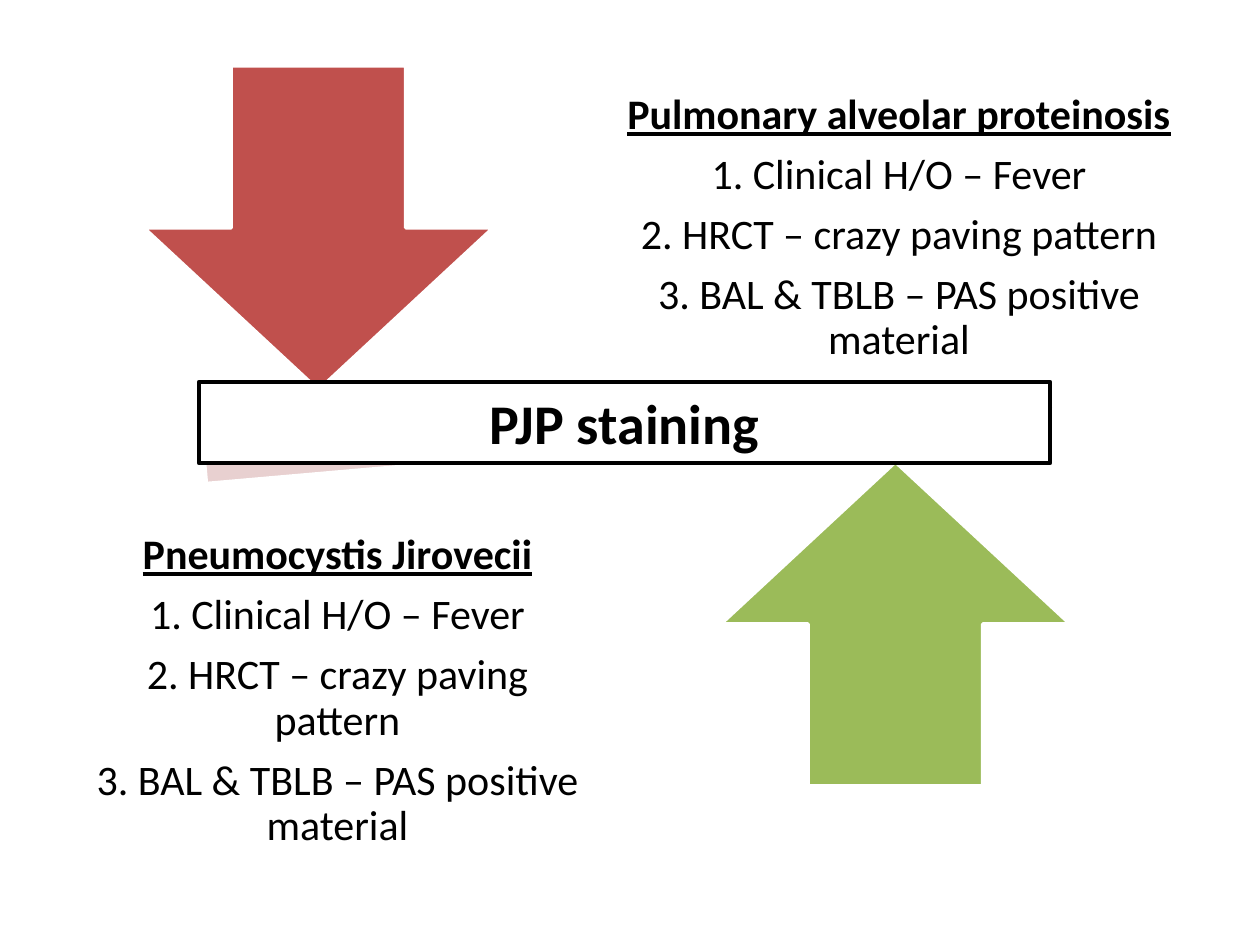
from pptx import Presentation
from pptx.dml.color import RGBColor
from pptx.enum.shapes import MSO_SHAPE as Kind
from pptx.enum.text import MSO_ANCHOR as Anchor, PP_ALIGN as Align
from pptx.util import Emu, Pt

SCALE = 914400 / 126
HUES = {
    "red": "C0504D",
    "pink": "E8D0D0",
    "green": "9BBB59",
    "white": "FFFFFF",
    "black": "000000",
}
SIGNS = [
    "1. Clinical H/O – Fever",
    "2. HRCT – crazy paving pattern",
    "3. BAL & TBLB – PAS positive material",
]


def px(n):
    return Emu(round(n * SCALE))


def hue(name):
    return RGBColor.from_string(HUES[name])


def add_form(slide, kind, box, fill, line="white", width=2):
    form = slide.shapes.add_shape(kind, *map(px, box))
    form.shadow.inherit = False
    form.fill.solid()
    form.fill.fore_color.rgb = hue(fill)
    form.line.color.rgb = hue(line)
    form.line.width = Pt(width)
    return form


def style(para, size, bold=False, under=False):
    para.alignment = Align.CENTER
    for run in para.runs:
        font = run.font
        font.name = "Calibri"
        font.size = Pt(size)
        font.bold = bold
        font.underline = under
        font.color.rgb = hue("black")


def add_list(slide, box, title):
    """Add an underlined title with the shared signs below it."""
    frame = slide.shapes.add_textbox(*map(px, box)).text_frame
    frame.word_wrap = True
    frame.vertical_anchor = Anchor.MIDDLE
    frame.margin_left = frame.margin_right = px(24)
    frame.margin_top = frame.margin_bottom = px(24)
    frame.text = "\n".join([title, *SIGNS])
    for i, para in enumerate(frame.paragraphs):
        para.line_spacing = 0.9
        para.space_after = Pt(8.4)
        style(para, 24, bold=i == 0, under=i == 0)


def add_label(slide, box, text):
    form = add_form(slide, Kind.RECTANGLE, box, "white", "black", 2.5)
    frame = form.text_frame
    frame.word_wrap = True
    frame.vertical_anchor = Anchor.MIDDLE
    frame.text = text
    style(frame.paragraphs[0], 32, bold=True)


def main():
    deck = Presentation()
    deck.slide_width, deck.slide_height = px(1260), px(945)
    slide = deck.slides.add_slide(deck.slide_layouts[6])

    add_form(slide, Kind.DOWN_ARROW, (144, 66, 349, 324), "red")
    bar = add_form(slide, Kind.MATH_MINUS, (50, 365, 1158, 132), "pink")
    bar.rotation = 355
    add_list(slide, (63, 522, 549, 339), "Pneumocystis Jirovecii")
    add_form(slide, Kind.UP_ARROW, (721, 462, 349, 324), "green")
    add_list(slide, (601, 59, 596, 339), "Pulmonary alveolar proteinosis")
    add_label(slide, (199, 382, 851, 81), "PJP staining")

    deck.save("out.pptx")


if __name__ == "__main__":
    main()
